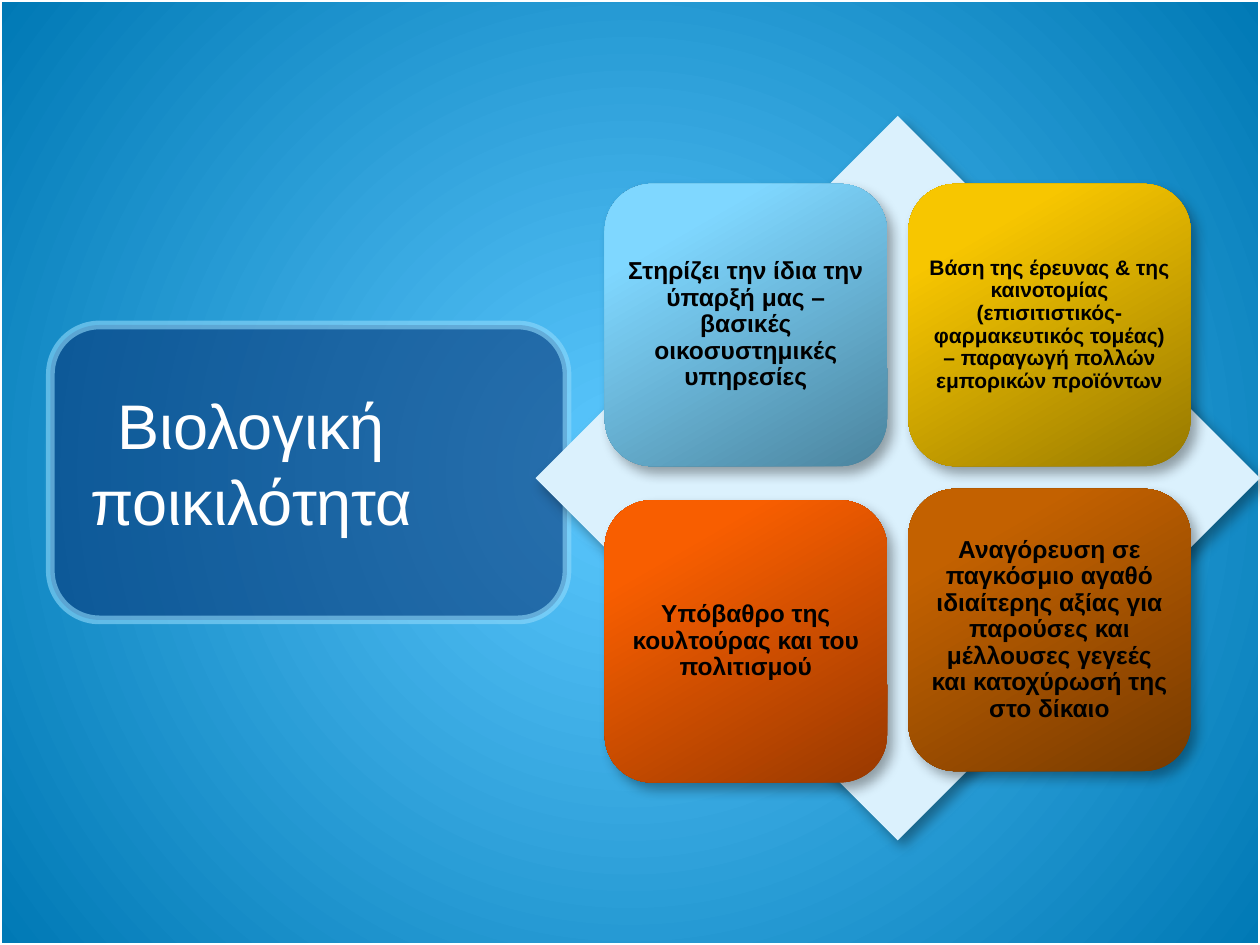
from lxml import etree
from pptx import Presentation
from pptx.dml.color import RGBColor
from pptx.enum.shapes import MSO_SHAPE as Shape
from pptx.enum.text import MSO_ANCHOR as Anchor, MSO_AUTO_SIZE as AutoSize, PP_ALIGN as Align
from pptx.oxml import parse_xml
from pptx.oxml.ns import nsdecls, qn
from pptx.util import Emu, Inches, Pt

COLORS = {
    "white": "FFFFFF",
    "black": "000000",
    "sky": "5DC9FF",
    "ocean": "0079B5",
    "panel": "073779",
    "panel_edge": "8FD9FB",
    "diamond": "DBF1FD",
}
TILE_COLORS = {
    "blue": ("4B849E", "7FD7FF", "81D7FF"),
    "gold": ("977900", "F7C600", "F8C700"),
    "orange": ("983900", "F85E00", "F95E00"),
    "brown": ("773B00", "C36100", "C46100"),
}
TILE_STOPS = (0, 80, 100)
TILE_SIZE = 2.24
LEFT, RIGHT = 4.8, 7.21
TILES = [
    (LEFT, 1.46, "blue", 14, 0.06,
     "Στηρίζει την ίδια την ύπαρξή μας –βασικές οικοσυστημικές υπηρεσίες"),
    (RIGHT, 1.46, "gold", 12, 0.05,
     "Βάση της έρευνας & της καινοτομίας (επισιτιστικός-φαρμακευτικός τομέας) "
     "– παραγωγή πολλών εμπορικών προϊόντων"),
    (LEFT, 3.97, "orange", 14, 0.06,
     "Υπόβαθρο της κουλτούρας και του πολιτισμού"),
    (RIGHT, 3.88, "brown", 14, 0.06,
     "Αναγόρευση σε παγκόσμιο αγαθό ιδιαίτερης αξίας για παρούσες και "
     "μέλλουσες γεγεές και κατοχύρωσή της στο δίκαιο"),
]


def gradient_xml(stops, direction):
    marks = "".join(
        f'<a:gs pos="{position * 1000}"><a:srgbClr val="{color}"/></a:gs>'
        for position, color in stops
    )
    return parse_xml(
        f'<a:gradFill {nsdecls("a")} rotWithShape="1"><a:gsLst>{marks}</a:gsLst>'
        f"{direction}</a:gradFill>"
    )


class SlideBuilder:
    font_name = "Arial"

    def __init__(self, deck):
        self.slide = deck.slides.add_slide(deck.slide_layouts[5])

    def background(self, center, edge):
        fill = self.slide.background.fill
        fill.gradient()
        old = self.slide.background._cSld.find(".//" + qn("a:gradFill"))
        direction = (
            '<a:path path="circle">'
            '<a:fillToRect l="50000" t="50000" r="50000" b="50000"/></a:path>'
        )
        old.getparent().replace(old, gradient_xml([(0, center), (100, edge)], direction))

    def shape(self, kind, left, top, width, height, fill=None, line=None, line_width=0):
        shape = self.slide.shapes.add_shape(
            kind, Inches(left), Inches(top), Inches(width), Inches(height)
        )
        shape.shadow.inherit = False
        for part, color in ((shape.fill, fill), (shape.line.fill, line)):
            if color:
                part.solid()
                part.fore_color.rgb = RGBColor.from_string(color)
            else:
                part.background()
        if line:
            shape.line.width = Pt(line_width)
        return shape

    def opacity(self, shape, percent):
        for color in shape.element.spPr.iter(qn("a:srgbClr")):
            etree.SubElement(color, qn("a:alpha"), val=str(percent * 1000))

    def shadow(self, shape):
        effects = shape.element.spPr.find(qn("a:effectLst"))
        effects.append(parse_xml(
            f'<a:outerShdw {nsdecls("a")} blurRad="{Pt(7)}" dist="{Pt(5)}" '
            f'dir="{50 * 60000}" algn="tl" rotWithShape="0">'
            f'<a:srgbClr val="{COLORS["black"]}"><a:alpha val="35000"/></a:srgbClr>'
            "</a:outerShdw>"
        ))

    def text(self, shape, words, size, color, inset=None, bold=False, spacing=1.0):
        frame = shape.text_frame
        frame.text = words
        frame_format = {
            "word_wrap": True,
            "auto_size": AutoSize.NONE,
            "vertical_anchor": Anchor.MIDDLE,
        }
        if inset is not None:
            for side in ("left", "top", "right", "bottom"):
                frame_format[f"margin_{side}"] = Inches(inset)
        para = frame.paragraphs[0]
        para_format = {"alignment": Align.CENTER, "line_spacing": spacing}
        font_format = {"name": self.font_name, "size": Pt(size), "bold": bold}
        for target, values in (
            (frame, frame_format), (para, para_format),
            *((span.font, font_format) for span in para.runs),
        ):
            for name, value in values.items():
                setattr(target, name, value)
        for span in para.runs:
            span.font.color.rgb = RGBColor.from_string(color)

    def title(self, words, left, top, width, height, size):
        box = self.slide.shapes.title
        place = {"left": left, "top": top, "width": width, "height": height}
        for name, value in place.items():
            setattr(box, name, Inches(value))
        self.text(box, words, size, COLORS["white"])
        box.element.getparent().append(box.element)

    def tile(self, left, top, color, size, inset, words):
        tile = self.shape(Shape.ROUNDED_RECTANGLE, left, top, TILE_SIZE, TILE_SIZE,
                          COLORS["white"])
        solid = tile.element.spPr.find(qn("a:solidFill"))
        stops = zip(TILE_STOPS, TILE_COLORS[color])
        direction = f'<a:lin ang="{240 * 60000}" scaled="0"/>'
        tile.element.spPr.replace(solid, gradient_xml(stops, direction))
        self.shadow(tile)
        self.text(tile, words, size, COLORS["black"], inset, bold=True, spacing=0.9)


def main():
    deck = Presentation()
    deck.slide_width, deck.slide_height = Inches(10), Inches(7.5)
    page = SlideBuilder(deck)
    page.background(COLORS["sky"], COLORS["ocean"])
    page.shape(Shape.RECTANGLE, 0, 0, 10, 7.5, line=COLORS["white"], line_width=2)
    panel = page.shape(Shape.ROUNDED_RECTANGLE, 0.4, 2.58, 4.1, 2.34,
                       COLORS["panel"], COLORS["panel_edge"], 5)
    page.opacity(panel, 60)
    page.title("Βιολογική\vποικιλότητα", -0.67, 2.67, 5.33, 2, 36)
    diamond = page.shape(Shape.DIAMOND, 4.25, 0.92, 5.75, 5.75, COLORS["diamond"])
    page.shadow(diamond)
    for tile in TILES:
        page.tile(*tile)
    deck.save("out.pptx")


if __name__ == "__main__":
    main()
